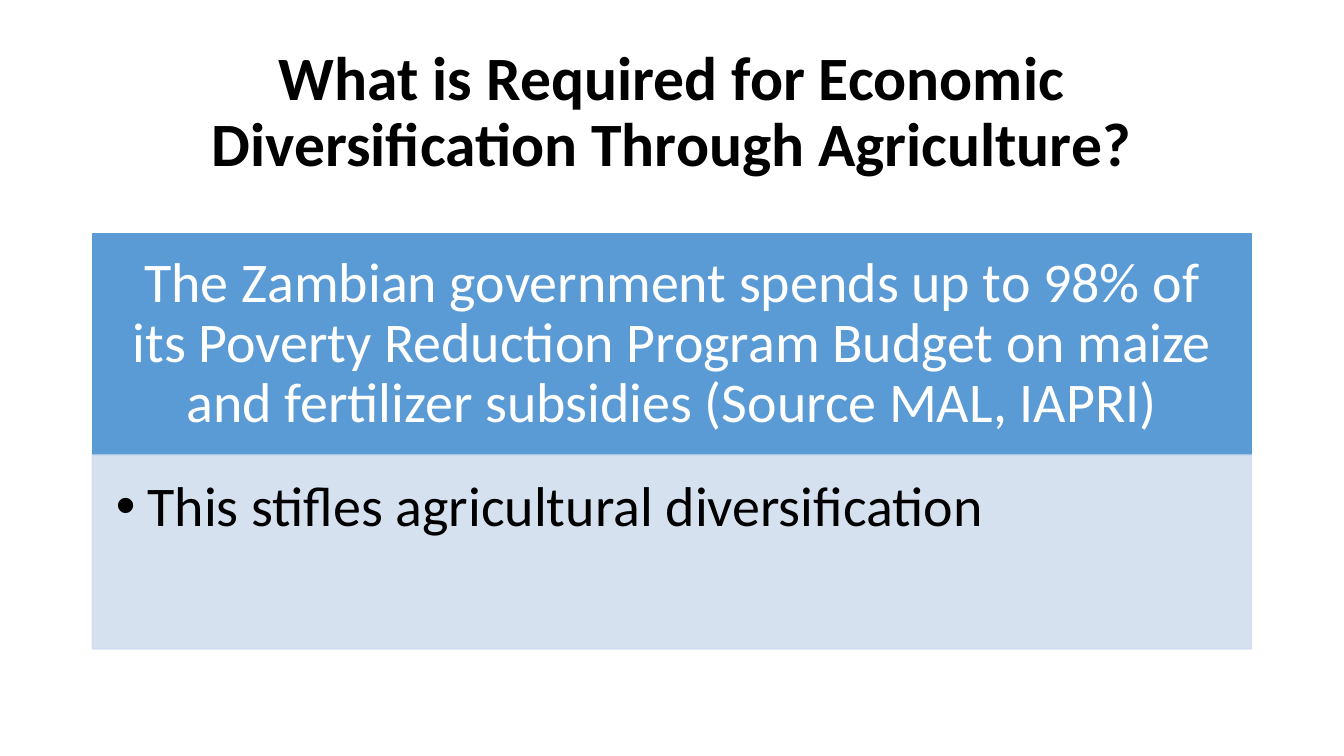
from lxml.etree import SubElement
from pptx import Presentation
from pptx.dml.color import RGBColor
from pptx.enum.shapes import MSO_SHAPE
from pptx.enum.text import MSO_ANCHOR, MSO_AUTO_SIZE, PP_ALIGN
from pptx.oxml.ns import qn
from pptx.util import Pt

COLORS = {"black": "000000", "white": "FFFFFF", "blue": "5B9BD5", "pale": "D2DEEF"}
LEFT, WIDTH = 66, 828


def color(name):
    return RGBColor.from_string(COLORS[name])


def add_run(para, text, size, tone, bold=False):
    run = para.add_run()
    run.text = text
    run.font.name = "Calibri"
    run.font.size = Pt(size)
    run.font.bold = bold
    run.font.color.rgb = color(tone)


def set_frame(frame, anchor, insets):
    frame.word_wrap = True
    frame.auto_size = MSO_AUTO_SIZE.NONE
    frame.vertical_anchor = anchor
    (frame.margin_left, frame.margin_top,
     frame.margin_right, frame.margin_bottom) = map(Pt, insets)


def set_para(para, align, after=0):
    para.alignment = align
    para.line_spacing = 0.9
    para.space_before = Pt(0)
    para.space_after = Pt(after)


def add_title(slide, text):
    title = slide.shapes.title
    title.left, title.top = Pt(LEFT), Pt(28.75)
    title.width, title.height = Pt(WIDTH), Pt(104.4)
    set_frame(title.text_frame, MSO_ANCHOR.MIDDLE, (7.2, 3.6, 7.2, 3.6))
    para = title.text_frame.paragraphs[0]
    set_para(para, PP_ALIGN.CENTER)
    add_run(para, text, 44, "black", True)


def add_panel(slide, top, height, fill, anchor, insets):
    panel = slide.shapes.add_shape(
        MSO_SHAPE.RECTANGLE, Pt(LEFT), Pt(top), Pt(WIDTH), Pt(height))
    panel.shadow.inherit = False
    panel.fill.solid()
    panel.fill.fore_color.rgb = color(fill)
    panel.line.color.rgb = color(fill)
    panel.line.width = Pt(1)
    set_frame(panel.text_frame, anchor, insets)
    return panel


def fade(shape, percent):
    for tint in shape._element.spPr.iter(qn("a:srgbClr")):
        SubElement(tint, qn("a:alpha"), val=str(percent * 1000))


def add_bullet(para, indent):
    props = para._p.get_or_add_pPr()
    props.set("marL", str(Pt(indent)))
    props.set("indent", str(-Pt(indent)))
    SubElement(props, qn("a:buFont"), typeface="Arial")
    SubElement(props, qn("a:buChar"), char="•")


def main():
    deck = Presentation()
    deck.slide_width, deck.slide_height = Pt(960), Pt(540)
    slide = deck.slides.add_slide(deck.slide_layouts[5])
    add_title(slide, "What is Required for Economic Diversification Through Agriculture?")

    head = add_panel(slide, 167, 158, "blue", MSO_ANCHOR.MIDDLE,
                     (22.4, 12.8, 22.4, 12.8))
    para = head.text_frame.paragraphs[0]
    set_para(para, PP_ALIGN.CENTER, 14)
    add_run(para, "The Zambian government spends up to 98% of its Poverty Reduction "
            "Program Budget on maize and fertilizer subsidies (Source MAL, IAPRI)",
            40, "white")

    body = add_panel(slide, 325, 138.5, "pale", MSO_ANCHOR.TOP,
                     (16.8, 16.8, 22.4, 25.2))
    fade(body, 90)
    para = body.text_frame.paragraphs[0]
    set_para(para, PP_ALIGN.LEFT, 6)
    add_bullet(para, 22.5)
    add_run(para, "This stifles agricultural diversification", 40, "black")

    deck.save("out.pptx")


if __name__ == "__main__":
    main()
